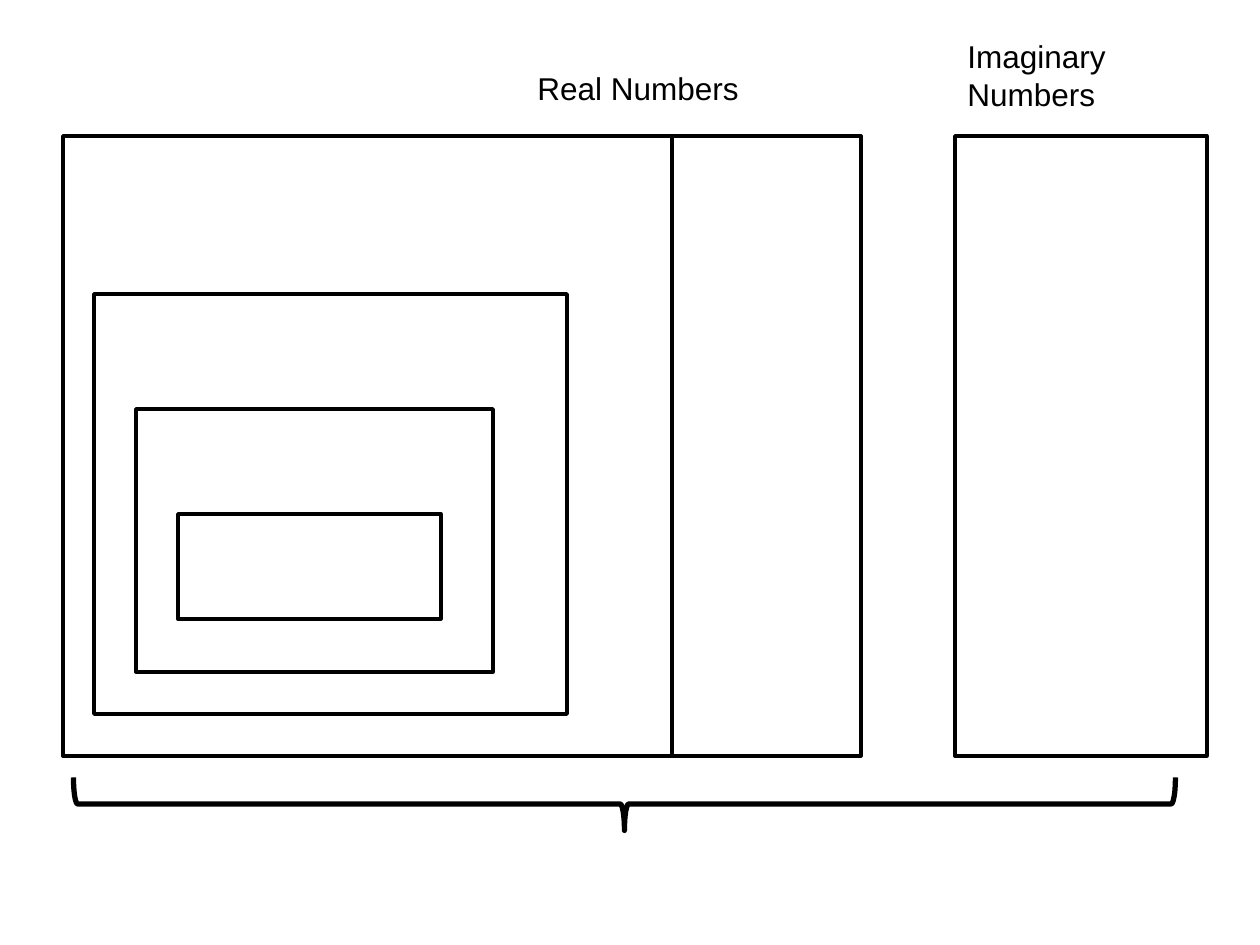
from dataclasses import dataclass

from pptx import Presentation
from pptx.dml.color import RGBColor
from pptx.enum.shapes import MSO_SHAPE
from pptx.enum.text import MSO_AUTO_SIZE
from pptx.util import Emu, Pt

PX = 914400 // 126  # EMU per px
SLIDE_SIZE = (1260, 945)


@dataclass(frozen=True)
class Theme:
    ink: RGBColor = RGBColor(0, 0, 0)
    font: str = "Arial"
    label_size: int = 18
    box_line: int = 2
    brace_line: int = 3


THEME = Theme()

# Lengths in px: left, top, width, height
COLUMN_TOP, COLUMN_HEIGHT = 136, 620
COLUMNS = [(63, 609), (672, 189), (955, 252)]  # left, width
NESTED_BOXES = [
    (94, 294, 473, 420),
    (136, 409, 357, 263),
    (178, 514, 263, 105),
]
LABELS = [
    ("Real Numbers", (525, 63, 242, 50)),
    ("Imaginary Numbers", (955, 31, 231, 90)),
]
BRACE = (74, 777, 1102, 53)


def emu(box):
    return [Emu(length * PX) for length in box]


def add_outline(slide, preset, box, line_width):
    shape = slide.shapes.add_shape(preset, *emu(box))
    shape.shadow.inherit = False
    shape.fill.background()
    shape.line.color.rgb = THEME.ink
    shape.line.width = Pt(line_width)
    return shape


def add_label(slide, text, box):
    frame = slide.shapes.add_textbox(*emu(box)).text_frame
    frame.word_wrap = True
    frame.auto_size = MSO_AUTO_SIZE.SHAPE_TO_FIT_TEXT
    run = frame.paragraphs[0].add_run()
    run.text = text
    run.font.name = THEME.font
    run.font.size = Pt(THEME.label_size)
    run.font.color.rgb = THEME.ink


def add_brace_below(slide, box):
    """Turn a left brace a quarter so that it fills box and points down."""
    left, top, width, height = box
    shift = (width - height) // 2
    upright = (left + shift, top - shift, height, width)
    brace = add_outline(slide, MSO_SHAPE.LEFT_BRACE, upright, THEME.brace_line)
    brace.rotation = 270
    brace.adjustments[0] = 0.08
    brace.adjustments[1] = 0.5


def main():
    presentation = Presentation()
    presentation.slide_width, presentation.slide_height = emu(SLIDE_SIZE)
    slide = presentation.slides.add_slide(presentation.slide_layouts[6])

    columns = [(left, COLUMN_TOP, width, COLUMN_HEIGHT) for left, width in COLUMNS]
    for box in columns + NESTED_BOXES:
        add_outline(slide, MSO_SHAPE.RECTANGLE, box, THEME.box_line)
    for text, box in LABELS:
        add_label(slide, text, box)
    add_brace_below(slide, BRACE)

    presentation.save("out.pptx")


if __name__ == "__main__":
    main()
